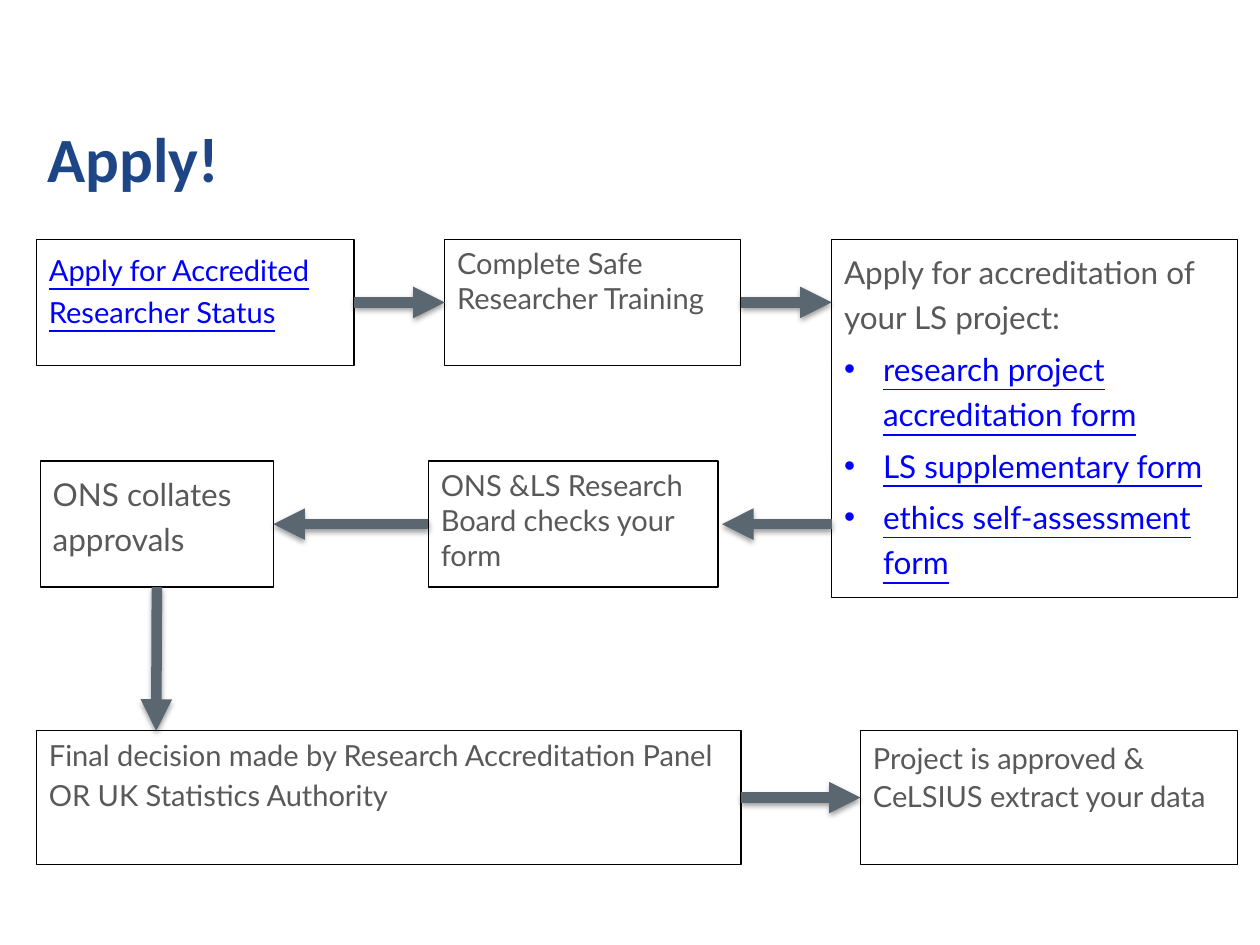
from lxml import etree
from pptx import Presentation
from pptx.dml.color import RGBColor
from pptx.enum.shapes import MSO_CONNECTOR, MSO_SHAPE
from pptx.enum.text import MSO_ANCHOR, MSO_AUTO_SIZE, PP_ALIGN
from pptx.oxml import parse_xml
from pptx.oxml.ns import qn
from pptx.util import Inches, Pt

GREY, BLUE = "595959", "0000FF"
TOP, RIGHT, BOTTOM, LEFT = 0, 3, 2, 1
SHADOW = (
    '<a:effectLst xmlns:a="http://schemas.openxmlformats.org/drawingml/2006/main">'
    '<a:outerShdw blurRad="40000" dist="20000" dir="5400000" rotWithShape="0">'
    '<a:srgbClr val="000000"><a:alpha val="38000"/></a:srgbClr>'
    '</a:outerShdw></a:effectLst>'
)


def rgb(value):
    return RGBColor.from_string(value)


prs = Presentation()
prs.slide_width, prs.slide_height = Inches(10), Inches(7.5)
s = prs.slides.add_slide(prs.slide_layouts[5])

title = s.shapes.title
title.left, title.top = Inches(0.28), Inches(0.62)
title.width, title.height = Inches(7.06), Inches(1.25)
tf = title.text_frame
tf.word_wrap = True
tf.auto_size = MSO_AUTO_SIZE.NONE
tf.vertical_anchor = MSO_ANCHOR.MIDDLE
p = tf.paragraphs[0]
p.alignment = PP_ALIGN.LEFT
r = p.add_run()
r.text = "Apply!"
r.font.name, r.font.size, r.font.bold = "Calibri", Pt(36), True
r.font.color.rgb = rgb("1E4586")

# name: (left, top, width, height), text size, line spacing, [(text, is form link, bulleted)]
steps = {
    "researcher": ((0.29, 1.9, 2.52, 1), 16.6, 1.2,
                   [("Apply for Accredited Researcher Status", True, False)]),
    "training": ((3.53, 1.9, 2.35, 1), 16.6, 1.0,
                 [("Complete Safe Researcher Training", False, False)]),
    "project": ((6.6, 1.9, 3.22, 2.84), 18, 1.2,
                [("Apply for accreditation of your LS project:", False, False),
                 ("research project accreditation form", True, True),
                 ("LS supplementary form", True, True),
                 ("ethics self-assessment form", True, True)]),
    "board": ((3.4, 3.66, 2.3, 1), 16.6, 1.0,
              [("ONS &LS Research Board checks your form", False, False)]),
    "collation": ((0.32, 3.66, 1.85, 1), 18, 1.2,
                  [("ONS collates approvals", False, False)]),
    "decision": ((0.29, 5.8, 5.59, 1.06), 16.6, 1.0,
                 [("Final decision made by Research Accreditation Panel", False, False),
                  ("OR UK Statistics Authority", False, False)]),
    "approval": ((6.83, 5.8, 2.99, 1.06), 16.6, 1.1,
                 [("Project is approved & CeLSIUS extract your data", False, False)]),
}

boxes = {}
for name, (place, size, spacing, paragraphs) in steps.items():
    box = s.shapes.add_shape(MSO_SHAPE.RECTANGLE, *[Inches(v) for v in place])
    box.shadow.inherit = False
    box.fill.background()
    box.line.color.rgb = rgb("000000")
    box.line.width = Pt(0.75)
    boxes[name] = box
    tf = box.text_frame
    tf.word_wrap = True
    tf.vertical_anchor = MSO_ANCHOR.TOP
    for i, (text, is_link, bulleted) in enumerate(paragraphs):
        p = tf.add_paragraph() if i else tf.paragraphs[0]
        p.alignment = PP_ALIGN.LEFT
        p.line_spacing = spacing
        if i:
            p.space_before = Pt(3.5)
        if bulleted:
            pPr = p._p.get_or_add_pPr()
            pPr.set("marL", str(Inches(0.31)))
            pPr.set("indent", str(-Inches(0.31)))
            etree.SubElement(pPr, qn("a:buFont")).set("typeface", "Arial")
            etree.SubElement(pPr, qn("a:buChar")).set("char", "•")
        r = p.add_run()
        r.text = text
        r.font.name, r.font.size = "Lato", Pt(size)
        r.font.color.rgb = rgb(BLUE if is_link else GREY)
        if is_link:
            r.font.underline = True

# start, end, (box, side) joined at the start, (box, side) joined at the end
arrows = [
    ((2.81, 2.4), (3.53, 2.4), ("researcher", RIGHT), ("training", LEFT)),
    ((5.88, 2.4), (6.6, 2.4), ("training", RIGHT), None),
    ((6.6, 4.16), (5.73, 4.16), None, None),
    ((3.4, 4.16), (2.17, 4.16), ("board", LEFT), ("collation", RIGHT)),
    ((1.24, 4.66), (1.24, 5.8), ("collation", BOTTOM), None),
    ((5.88, 6.33), (6.83, 6.33), ("decision", RIGHT), ("approval", LEFT)),
]
for start, end, source, target in arrows:
    arrow = s.shapes.add_connector(MSO_CONNECTOR.STRAIGHT,
                                   *[Inches(v) for v in start + end])
    if source:
        arrow.begin_connect(boxes[source[0]], source[1])
    if target:
        arrow.end_connect(boxes[target[0]], target[1])
    arrow.line.color.rgb = rgb("5B6770")
    arrow.line.width = Pt(6)
    etree.SubElement(arrow.line._get_or_add_ln(), qn("a:tailEnd")).set("type", "triangle")
    arrow._element.spPr.append(parse_xml(SHADOW))

prs.save("out.pptx")
